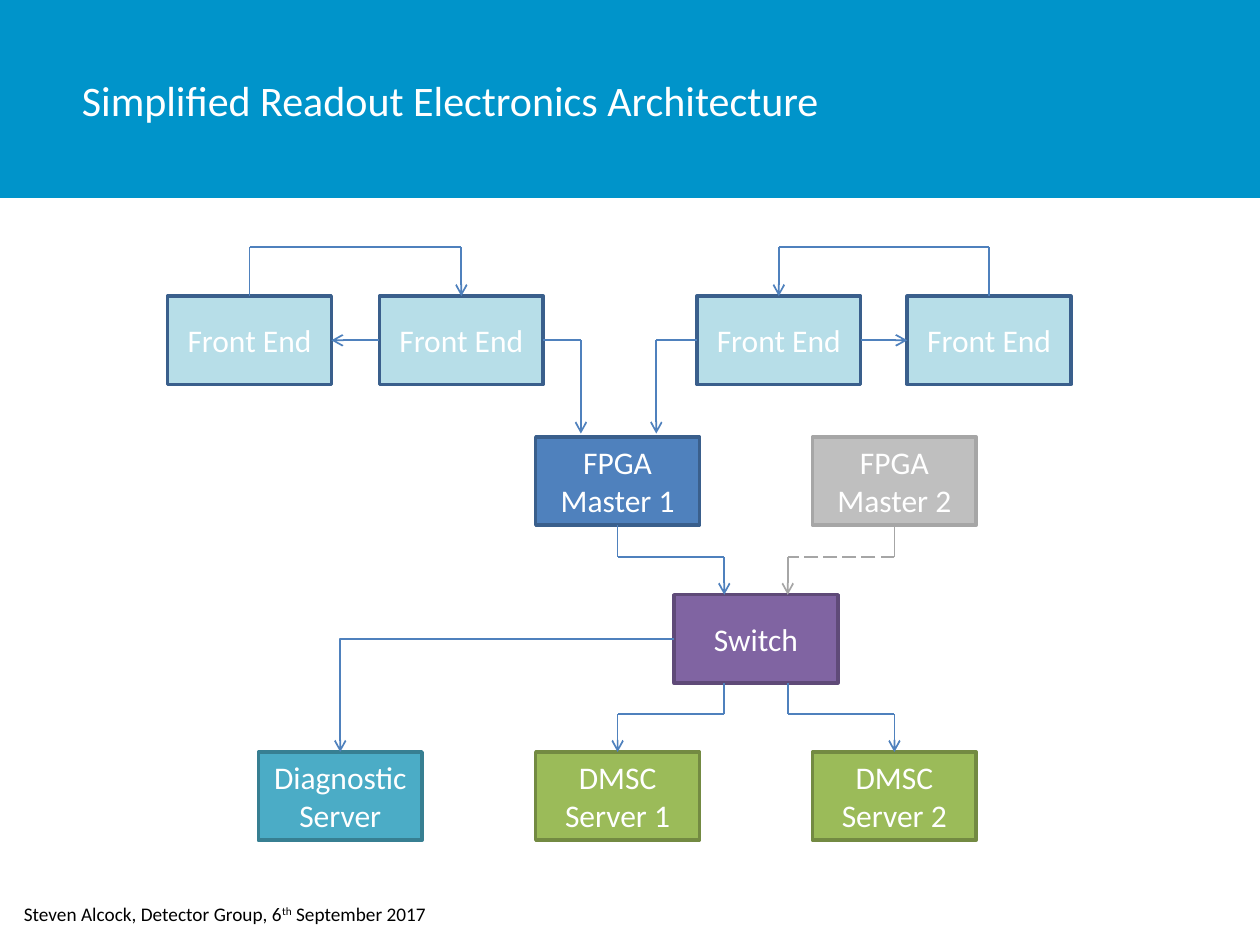
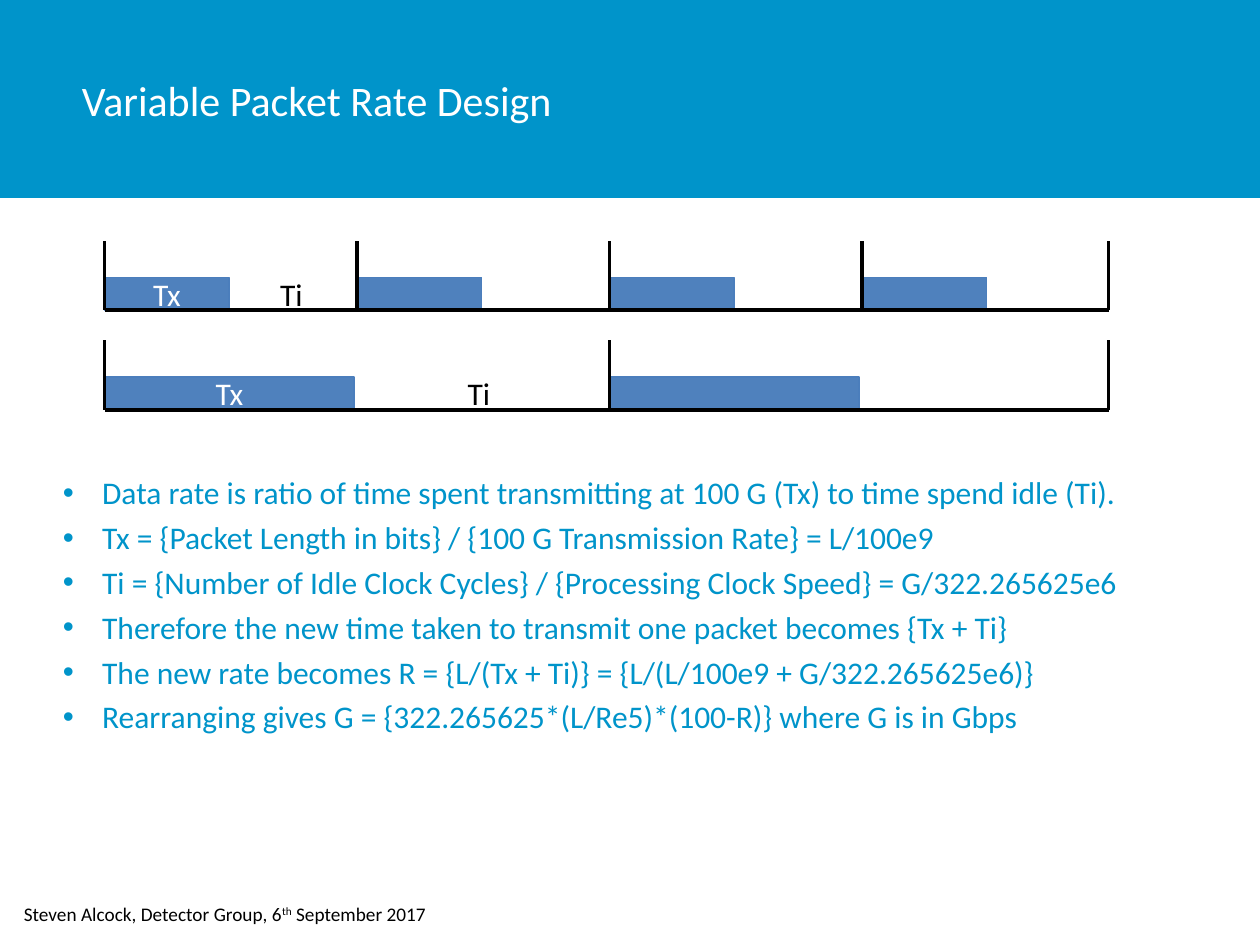
from dataclasses import dataclass

from lxml import etree
from pptx import Presentation
from pptx.dml.color import RGBColor
from pptx.enum.dml import MSO_LINE
from pptx.enum.shapes import MSO_CONNECTOR, MSO_SHAPE
from pptx.enum.text import MSO_ANCHOR, MSO_AUTO_SIZE, PP_ALIGN
from pptx.oxml.ns import qn
from pptx.util import Cm, Pt

STRAIGHT, ELBOW = MSO_CONNECTOR.STRAIGHT, MSO_CONNECTOR.ELBOW
RECTANGLE = MSO_SHAPE.RECTANGLE
LONG_DASH = MSO_LINE.LONG_DASH
FIT_TEXT = MSO_AUTO_SIZE.SHAPE_TO_FIT_TEXT
MIDDLE, LEFT, CENTER = MSO_ANCHOR.MIDDLE, PP_ALIGN.LEFT, PP_ALIGN.CENTER
TOP_SIDE, LEFT_SIDE, BOTTOM_SIDE, RIGHT_SIDE = range(4)
TITLE_ONLY = 5


@dataclass(frozen=True)
class Theme:
    font: str = "Calibri"
    title_size: int = 24
    text_size: int = 18
    footer_size: int = 11
    band: str = "0094CA"
    white: str = "FFFFFF"
    black: str = "000000"
    link: str = "4F81BD"
    bar_edge: str = "4B7EBC"
    spare_link: str = "A6A6A6"
    # Fill and outline of each kind of block
    front_end: tuple = ("B7DEE8", "3A5F8C")
    master: tuple = ("4F81BD", "3A5F8C")
    spare: tuple = ("BFBFBF", "A6A6A6")
    switch: tuple = ("8064A2", "5F4A78")
    server: tuple = ("9BBB59", "738A42")
    diagnostic: tuple = ("4BACC6", "377F92")


THEME = Theme()
BLOCK_WIDTH, BLOCK_HEIGHT = Cm(3.3), Cm(1.78)
FORMULAS = (
    "Data rate is ratio of time spent transmitting at 100 G (Tx) to time spend idle (Ti).",
    "Tx = {Packet Length in bits} / {100 G Transmission Rate} = L/100e9",
    "Ti = {Number of Idle Clock Cycles} / {Processing Clock Speed} = G/322.265625e6",
    "Therefore the new time taken to transmit one packet becomes {Tx + Ti}",
    "The new rate becomes R = {L/(Tx + Ti)} = {L/(L/100e9 + G/322.265625e6)}",
    "Rearranging gives G = {322.265625*(L/Re5)*(100-R)} where G is in Gbps",
)


# Formatting helpers
def apply(target, **values):
    for name, value in values.items():
        setattr(target, name, value)


def style_font(font, size, color):
    apply(font, name=THEME.font, size=Pt(size))
    font.color.rgb = RGBColor.from_string(color)


def style_line(line, color, width):
    line.color.rgb = RGBColor.from_string(color)
    line.width = Pt(width)


def write_centred(shape, text, color):
    apply(shape.text_frame, text=text, word_wrap=True, vertical_anchor=MIDDLE)
    paragraph = shape.text_frame.paragraphs[0]
    paragraph.alignment = CENTER
    style_font(paragraph.font, THEME.text_size, color)


# Shared parts
def add_rectangle(slide, left, top, width, height, fill):
    rectangle = slide.shapes.add_shape(RECTANGLE, left, top, width, height)
    rectangle.shadow.inherit = False
    rectangle.fill.solid()
    rectangle.fill.fore_color.rgb = RGBColor.from_string(fill)
    rectangle.line.fill.background()
    return rectangle


def add_layout_band(slide):
    """Draw the title band and move it behind everything on the layout."""
    band = add_rectangle(slide, 0, 0, Cm(25.4), Cm(3.99), THEME.band)
    slide.slide_layout.shapes.element.insert(2, band.element)


def add_titled_slide(deck, title_text):
    slide = deck.slides.add_slide(deck.slide_layouts[TITLE_ONLY])
    title = slide.shapes.title
    apply(title, left=Cm(1.65), top=Cm(0), width=Cm(16.84), height=Cm(4.01))
    apply(title.text_frame, text=title_text, vertical_anchor=MIDDLE, word_wrap=True,
          margin_left=0, margin_top=0, margin_right=0, margin_bottom=0)
    heading = title.text_frame.paragraphs[0]
    heading.alignment = LEFT
    style_font(heading.font, THEME.title_size, THEME.white)
    add_footer(slide)
    return slide


def add_footer(slide):
    footer = slide.shapes.add_textbox(Cm(0.23), Cm(18.06), Cm(8.74), Cm(0.74))
    apply(footer.text_frame, word_wrap=False, auto_size=FIT_TEXT)
    paragraph = footer.text_frame.paragraphs[0]
    for text, baseline in (("Steven Alcock, Detector Group, 6", 0), ("th", 30000),
                           (" September 2017", 0)):
        run = paragraph.add_run()
        run.text = text
        style_font(run.font, THEME.footer_size, THEME.black)
        if baseline:
            run._r.get_or_add_rPr().set("baseline", str(baseline))


def add_line(slide, start, end, color, width=1, arrow=False, dash=None, kind=STRAIGHT):
    line = slide.shapes.add_connector(kind, *start, *end)
    style_line(line.line, color, width)
    if dash:
        line.line.dash_style = dash
    properties = line.element.spPr
    if arrow:
        etree.SubElement(properties.find(qn("a:ln")), qn("a:tailEnd"), type="arrow")
    etree.SubElement(properties, qn("a:effectLst"))
    return line


# Architecture diagram
def add_block(slide, left, top, text, colors):
    fill, edge = colors
    block = add_rectangle(slide, Cm(left), Cm(top), BLOCK_WIDTH, BLOCK_HEIGHT, fill)
    style_line(block.line, edge, 2)
    write_centred(block, text, THEME.white)
    return block


def side_point(block, side, shift=0):
    """Middle of a side, moved along a horizontal side by shift."""
    x = block.left + {LEFT_SIDE: 0, RIGHT_SIDE: block.width}.get(side, block.width // 2)
    y = block.top + {TOP_SIDE: 0, BOTTOM_SIDE: block.height}.get(side, block.height // 2)
    return x + shift, y


def add_route(slide, points, color=THEME.link, begin=None, end=None, dashed_leg=None):
    """Straight legs through the points, with an arrowhead on the last."""
    last = len(points) - 2
    legs = [add_line(slide, *ends, color, arrow=index == last,
                     dash=LONG_DASH if index == dashed_leg else None)
            for index, ends in enumerate(zip(points, points[1:]))]
    if begin:
        legs[0].begin_connect(*begin)
    if end:
        legs[-1].end_connect(*end)


def add_step(slide, exit_point, entry_point, level, **options):
    """Vertical, horizontal and vertical leg, crossing over at a level."""
    add_route(slide, [exit_point, (exit_point[0], level), (entry_point[0], level),
                      entry_point], **options)


def add_front_end_pair(slide, outer_left, inner_left, feed_x, inward, outward):
    outer, inner = (add_block(slide, left, 5.97, "Front End", THEME.front_end)
                    for left in (outer_left, inner_left))
    # Exchange between the two blocks
    add_route(slide, [side_point(inner, outward), side_point(outer, inward)],
              begin=(inner, outward), end=(outer, inward))
    add_step(slide, side_point(outer, TOP_SIDE), side_point(inner, TOP_SIDE), Cm(4.98),
             begin=(outer, TOP_SIDE), end=(inner, TOP_SIDE))
    # Feed towards the master
    exit_point = side_point(inner, inward)
    add_route(slide, [exit_point, (Cm(feed_x), exit_point[1]), (Cm(feed_x), Cm(8.74))],
              begin=(inner, inward))


def build_architecture(slide):
    left_column, middle_column, right_column = 5.21, 10.8, 16.38
    master_row, switch_row, server_row = 8.81, 11.99, 15.16

    add_front_end_pair(slide, 3.38, 7.65, 11.71, RIGHT_SIDE, LEFT_SIDE)
    add_front_end_pair(slide, 18.29, 14.05, 13.23, LEFT_SIDE, RIGHT_SIDE)

    master = add_block(slide, middle_column, master_row, "FPGA Master 1", THEME.master)
    spare = add_block(slide, right_column, master_row, "FPGA Master 2", THEME.spare)
    switch = add_block(slide, 13.59, switch_row, "Switch", THEME.switch)
    diagnostic = add_block(slide, left_column, server_row, "Diagnostic Server",
                           THEME.diagnostic)
    servers = [add_block(slide, left, server_row, f"DMSC Server {number}", THEME.server)
               for number, left in enumerate((middle_column, right_column), 1)]

    # Masters into the switch, and the switch out to the servers
    port = Cm(0.64)
    inputs = ((master, -port, THEME.link, None), (spare, port, THEME.spare_link, 1))
    for source, shift, color, dashed_leg in inputs:
        add_step(slide, side_point(source, BOTTOM_SIDE),
                 side_point(switch, TOP_SIDE, shift), Cm(11.23), color=color,
                 begin=(source, BOTTOM_SIDE), dashed_leg=dashed_leg)
    for server, shift in zip(servers, (-port, port)):
        add_step(slide, side_point(switch, BOTTOM_SIDE, shift),
                 side_point(server, TOP_SIDE), Cm(14.4), end=(server, TOP_SIDE))

    # Single bend to the diagnostic server
    branch = add_line(slide, side_point(switch, LEFT_SIDE),
                      side_point(diagnostic, TOP_SIDE), THEME.link, arrow=True, kind=ELBOW)
    branch.element.spPr.find(qn("a:prstGeom")).set("prst", "bentConnector2")
    branch.begin_connect(switch, LEFT_SIDE)
    branch.end_connect(diagnostic, TOP_SIDE)


# Packet timing
def add_timeline(slide, baseline, packets, bar_width):
    start, finish, bar_height = 2.11, 22.35, 0.66
    pitch = 20.36 / packets
    starts = [start + pitch * index for index in range(packets)]
    bar_top = Cm(baseline - bar_height)
    for index, left in enumerate(starts):
        bar = add_rectangle(slide, Cm(left), bar_top, Cm(bar_width), Cm(bar_height),
                            THEME.link)
        style_line(bar.line, THEME.bar_edge, 0.75)
        if index == 0:
            write_centred(bar, "Tx", THEME.white)
    idle = slide.shapes.add_textbox(Cm(start + bar_width), bar_top, Cm(bar_width),
                                    Cm(bar_height))
    write_centred(idle, "Ti", THEME.black)
    # Axis and packet boundaries
    add_line(slide, (Cm(start), Cm(baseline)), (Cm(finish), Cm(baseline)), THEME.black, 2)
    for x in (*starts, finish):
        add_line(slide, (Cm(x), Cm(baseline)), (Cm(x), Cm(baseline - 1.4)), THEME.black, 2)


def add_bullets(slide, lines):
    box = slide.shapes.add_textbox(Cm(1.02), Cm(9.42), Cm(22.94), Cm(8.33))
    frame = box.text_frame
    frame.word_wrap = True
    for index, line in enumerate(lines):
        paragraph = frame.add_paragraph() if index else frame.paragraphs[0]
        paragraph.text = line
        properties = paragraph._p.get_or_add_pPr()
        for name, value in {"marL": Cm(0.79), "indent": -Cm(0.79)}.items():
            properties.set(name, str(value))
        if index:
            paragraph.space_before = Pt(4)
        etree.SubElement(properties, qn("a:buFont"), typeface="Arial")
        etree.SubElement(properties, qn("a:buChar"), char="•")
        style_font(paragraph.font, THEME.text_size, THEME.band)


def build_packet_rate(slide):
    add_timeline(slide, 6.25, packets=4, bar_width=2.51)
    add_timeline(slide, 8.26, packets=2, bar_width=5.03)
    add_bullets(slide, FORMULAS)


def main():
    deck = Presentation()
    apply(deck, slide_width=Cm(25.4), slide_height=Cm(19.05))
    architecture = add_titled_slide(deck, "Simplified Readout Electronics Architecture")
    add_layout_band(architecture)
    build_architecture(architecture)
    build_packet_rate(add_titled_slide(deck, "Variable Packet Rate Design"))
    deck.save("out.pptx")


if __name__ == "__main__":
    main()
